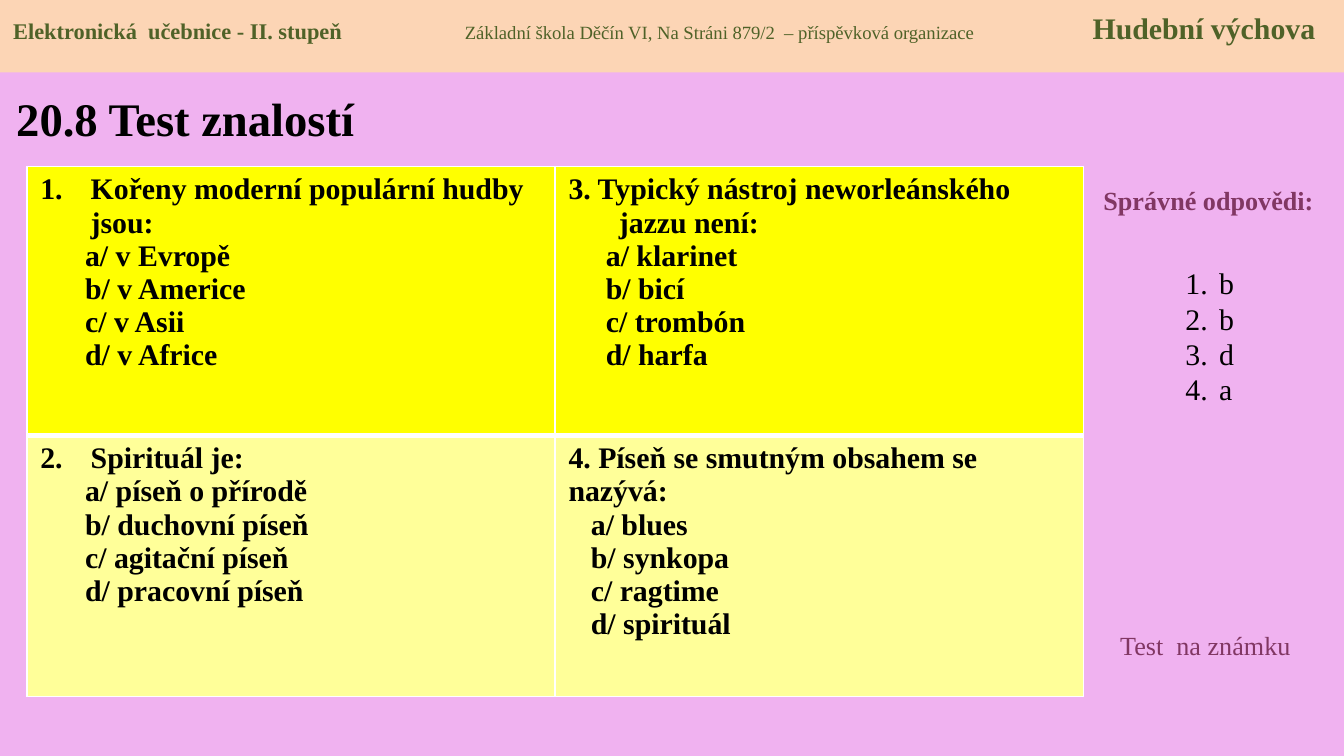
from lxml import etree
from pptx import Presentation
from pptx.dml.color import RGBColor
from pptx.enum.shapes import MSO_SHAPE
from pptx.enum.text import MSO_ANCHOR, MSO_AUTO_SIZE, PP_ALIGN
from pptx.oxml.ns import qn
from pptx.util import Pt

LEFT, CENTER = PP_ALIGN.LEFT, PP_ALIGN.CENTER
TOP, MIDDLE = MSO_ANCHOR.TOP, MSO_ANCHOR.MIDDLE
NO_AUTOFIT = MSO_AUTO_SIZE.NONE
RECTANGLE = MSO_SHAPE.RECTANGLE
TITLE_ONLY = 5

BLACK, WHITE, PLUM, GREEN = "000000", "FFFFFF", "813763", "4F6228"
QUESTION_INDENT = 27

QUESTIONS = [
    [
        {"text": "Kořeny moderní populární hudby jsou:", "number": 1, "hang": QUESTION_INDENT,
         "options": ["a/ v Evropě", "b/ v Americe", "c/ v Asii", "d/ v Africe"], "indent": 24},
        {"text": "3. Typický nástroj neworleánského jazzu není:", "number": None, "hang": QUESTION_INDENT,
         "options": ["a/ klarinet", "b/ bicí", "c/ trombón", "d/ harfa"], "indent": 20},
    ],
    [
        {"text": "Spirituál je:", "number": 2, "hang": QUESTION_INDENT,
         "options": ["a/ píseň o přírodě", "b/ duchovní píseň", "c/ agitační píseň", "d/ pracovní píseň"],
         "indent": 24},
        {"text": "4. Píseň se smutným obsahem se nazývá:", "number": None, "hang": 0,
         "options": ["a/ blues", "b/ synkopa", "c/ ragtime", "d/ spirituál"], "indent": 12},
    ],
]


def color(value):
    return RGBColor.from_string(value)


class QuizSlide:
    """Draws quiz elements on one slide in a shared style."""

    font_name = "Times New Roman"

    def __init__(self, slide):
        self.slide = slide

    def background(self, fill):
        self.slide.background.fill.solid()
        self.slide.background.fill.fore_color.rgb = color(fill)

    def run(self, paragraph, text, size, text_color, bold=False):
        run = paragraph.add_run()
        run.text = text
        run.font.name = self.font_name
        run.font.size = Pt(size)
        run.font.bold = bold
        run.font.color.rgb = color(text_color)

    def indent(self, paragraph, left, hang=0, number=None):
        properties = paragraph._p.get_or_add_pPr()
        properties.set("marL", str(Pt(left)))
        properties.set("indent", str(-Pt(hang)))
        if number:
            bullet = etree.SubElement(properties, qn("a:buAutoNum"), type="arabicPeriod")
            if number > 1:
                bullet.set("startAt", str(number))

    def tabs(self, paragraph, positions):
        tab_list = etree.SubElement(paragraph._p.get_or_add_pPr(), qn("a:tabLst"))
        for position in positions:
            etree.SubElement(tab_list, qn("a:tab"), pos=str(Pt(position)), algn="l")

    def title(self, text, left, top, width, height):
        shape = self.slide.shapes.title
        shape.left, shape.top, shape.width, shape.height = Pt(left), Pt(top), Pt(width), Pt(height)
        frame = shape.text_frame
        frame.auto_size = NO_AUTOFIT
        frame.vertical_anchor = MIDDLE
        frame.paragraphs[0].alignment = LEFT
        self.run(frame.paragraphs[0], text, 25, BLACK, True)

    def text_frame(self, left, top, width, height):
        shape = self.slide.shapes.add_textbox(Pt(left), Pt(top), Pt(width), Pt(height))
        shape.text_frame.word_wrap = True
        return shape.text_frame

    def label(self, text, left, top, width, height, bold=False, alignment=LEFT):
        paragraph = self.text_frame(left, top, width, height).paragraphs[0]
        paragraph.alignment = alignment
        self.run(paragraph, text, 14, PLUM, bold)

    def numbered_list(self, items, left, top, width, height):
        frame = self.text_frame(left, top, width, height)
        for index, item in enumerate(items):
            paragraph = frame.add_paragraph() if index else frame.paragraphs[0]
            paragraph.line_spacing = Pt(19)
            self.indent(paragraph, 18, 18, 1)
            self.run(paragraph, item, 16, BLACK)

    def border(self, cell, side, width):
        line = etree.SubElement(cell._tc.get_or_add_tcPr(), qn(f"a:ln{side}"), w=str(Pt(width)))
        fill = etree.SubElement(line, qn("a:solidFill"))
        etree.SubElement(fill, qn("a:srgbClr"), val=WHITE)

    def question(self, cell, question):
        frame = cell.text_frame
        paragraph = frame.paragraphs[0]
        self.indent(paragraph, question["hang"], question["hang"], question["number"])
        self.run(paragraph, question["text"], 16, BLACK, True)
        for option in question["options"]:
            paragraph = frame.add_paragraph()
            self.indent(paragraph, question["indent"])
            self.run(paragraph, option, 16, BLACK, True)

    def question_table(self, rows, left, top, width, heights, fills):
        frame = self.slide.shapes.add_table(
            len(rows), len(rows[0]), Pt(left), Pt(top), Pt(width), Pt(sum(heights)))
        table = frame.table
        last = len(rows) - 1
        for row_index, row in enumerate(rows):
            table.rows[row_index].height = Pt(heights[row_index])
            for column_index, question in enumerate(row):
                cell = table.cell(row_index, column_index)
                self.border(cell, "L", 1)
                self.border(cell, "R", 1)
                self.border(cell, "T", 3 if row_index else 1)
                self.border(cell, "B", 3 if row_index < last else 1)
                cell.fill.solid()
                cell.fill.fore_color.rgb = color(fills[row_index])
                self.question(cell, question)

    def header(self, parts, width, height, fill, tab_positions):
        shape = self.slide.shapes.add_shape(RECTANGLE, 0, 0, Pt(width), Pt(height))
        shape.shadow.inherit = False
        shape.fill.solid()
        shape.fill.fore_color.rgb = color(fill)
        shape.line.fill.background()
        frame = shape.text_frame
        frame.word_wrap = True
        frame.vertical_anchor = TOP
        frame.margin_top = Pt(5)
        paragraph = frame.paragraphs[0]
        paragraph.alignment = LEFT
        self.tabs(paragraph, tab_positions)
        for index, (text, size, bold) in enumerate(parts):
            self.run(paragraph, f"\t{text}" if index else text, size, GREEN, bold)


def main():
    presentation = Presentation()
    presentation.slide_width, presentation.slide_height = Pt(720), Pt(405)
    quiz = QuizSlide(presentation.slides.add_slide(presentation.slide_layouts[TITLE_ONLY]))
    quiz.background("F0B2F0")
    quiz.title("20.8 Test znalostí", 1.5, 39.5, 230, 47)
    quiz.label("Správné odpovědi:", 579.5, 95.5, 136, 24.5, True, CENTER)
    quiz.question_table(QUESTIONS, 14.4, 89.2, 566, [144, 140], ["FFFF00", "FFFF99"])
    quiz.numbered_list(["b", "b", "d", "a"], 628, 138.5, 40, 83)
    quiz.label("Test  na známku", 593, 333.5, 113, 24.5)
    header_parts = [
        ("Elektronická  učebnice - II. stupeň", 12, True),
        ("Základní škola Děčín VI, Na Stráni 879/2  – příspěvková organizace", 10, False),
        ("Hudební výchova", 16, True),
    ]
    quiz.header(header_parts, 720, 38.8, "FCD5B5", [242, 578.3])
    presentation.save("out.pptx")


if __name__ == "__main__":
    main()
